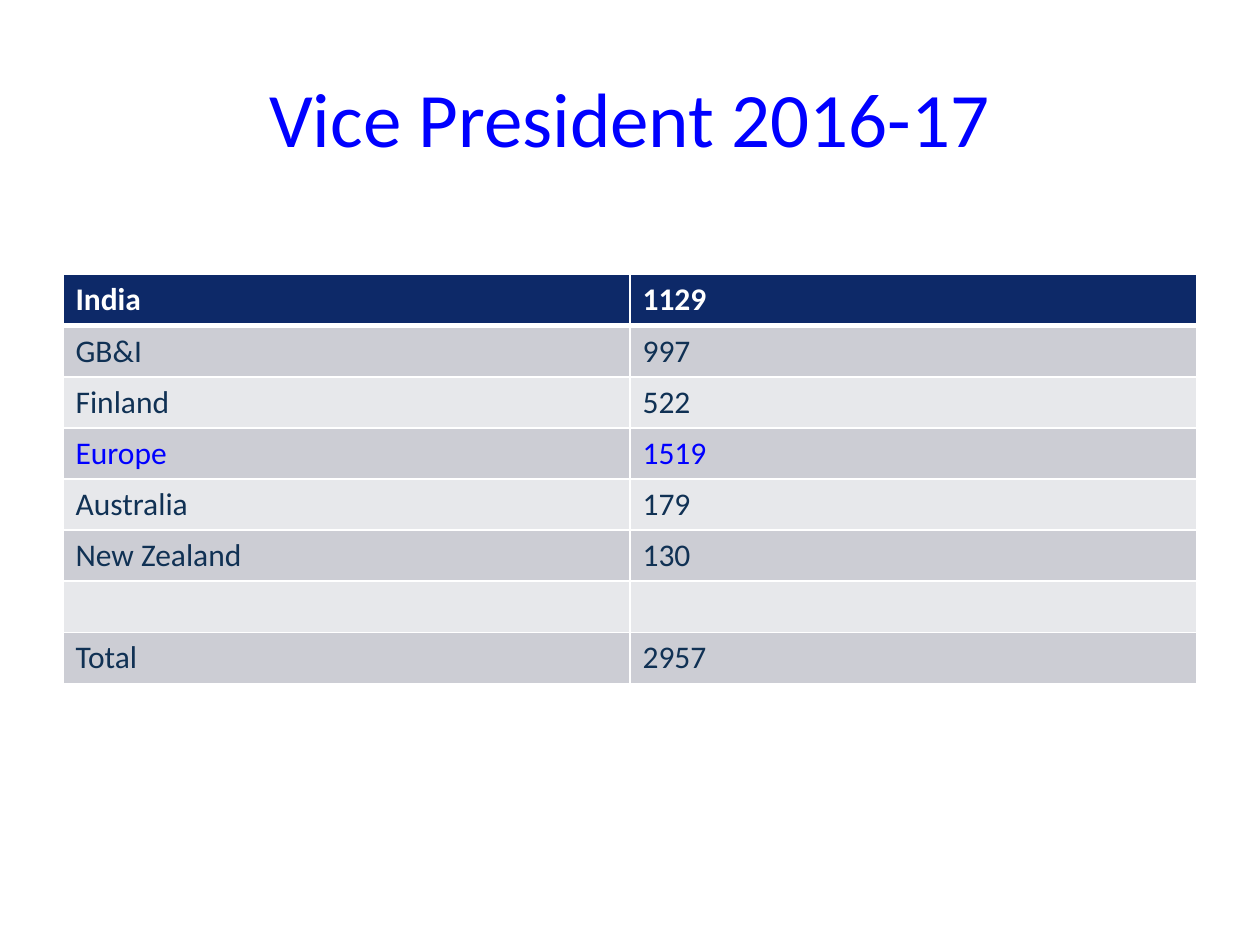
"""Build the Vice President 2016-17 slide with its table of figures by region."""
from lxml.etree import SubElement
from pptx import Presentation
from pptx.dml.color import RGBColor
from pptx.enum.text import MSO_ANCHOR, PP_ALIGN
from pptx.oxml.ns import qn
from pptx.util import Inches, Pt

TITLE = "Vice President 2016-17"
ROWS = [
    ("India", "1129"),
    ("GB&I", "997"),
    ("Finland", "522"),
    ("Europe", "1519"),
    ("Australia", "179"),
    ("New Zealand", "130"),
    ("", ""),
    ("Total", "2957"),
]
HIGHLIGHTED = "Europe"

THEME = {
    "font": "Calibri",
    "title_size": 44,
    "table_size": 18,
    "accent": "0000FF",
    "text": "103154",
    "header_text": "FFFFFF",
    "header_fill": "0D2968",
    "bands": ("E7E8EB", "CCCDD4"),
    "border": "FFFFFF",
    "thin": 1,
    "thick": 3,
}
LEFT, WIDTH = 0.5, 9
TITLE_TOP, TITLE_HEIGHT = 0.3, 1.25
TABLE_TOP, TABLE_HEIGHT = 2.18, 3.24


def add_span(para, text, size, color, bold=False):
    span = para.add_run()
    span.text = text
    span.font.name = THEME["font"]
    span.font.size = Pt(size)
    span.font.bold = bold
    span.font.color.rgb = RGBColor.from_string(color)


def add_borders(cell, top, bottom):
    properties = cell._tc.get_or_add_tcPr()
    widths = {"lnL": THEME["thin"], "lnR": THEME["thin"], "lnT": top, "lnB": bottom}
    for side, width in widths.items():
        line = SubElement(properties, qn(f"a:{side}"), w=str(Pt(width)))
        fill = SubElement(line, qn("a:solidFill"))
        SubElement(fill, qn("a:srgbClr"), val=THEME["border"])


def add_title(page):
    box = page.shapes.title
    box.left, box.top = Inches(LEFT), Inches(TITLE_TOP)
    box.width, box.height = Inches(WIDTH), Inches(TITLE_HEIGHT)
    box.text_frame.vertical_anchor = MSO_ANCHOR.MIDDLE
    para = box.text_frame.paragraphs[0]
    para.alignment = PP_ALIGN.CENTER
    add_span(para, TITLE, THEME["title_size"], THEME["accent"])


def add_results(page):
    table = page.shapes.add_table(
        len(ROWS), len(ROWS[0]), Inches(LEFT), Inches(TABLE_TOP),
        Inches(WIDTH), Inches(TABLE_HEIGHT),
    ).table
    for row, values in enumerate(ROWS):
        header = row == 0
        fill = THEME["header_fill"] if header else THEME["bands"][row % 2]
        color = THEME["header_text"] if header else THEME["text"]
        if values[0] == HIGHLIGHTED:
            color = THEME["accent"]
        top = THEME["thick"] if row == 1 else THEME["thin"]
        bottom = THEME["thick"] if header else THEME["thin"]
        for column, value in enumerate(values):
            cell = table.cell(row, column)
            add_borders(cell, top, bottom)
            cell.fill.solid()
            cell.fill.fore_color.rgb = RGBColor.from_string(fill)
            para = cell.text_frame.paragraphs[0]
            if value:
                add_span(para, value, THEME["table_size"], color, header)
            else:
                para.font.size = Pt(THEME["table_size"])


def main():
    deck = Presentation()
    deck.slide_width, deck.slide_height = Inches(10), Inches(7.5)
    page = deck.slides.add_slide(deck.slide_layouts[5])
    add_title(page)
    add_results(page)
    deck.save("out.pptx")


if __name__ == "__main__":
    main()
